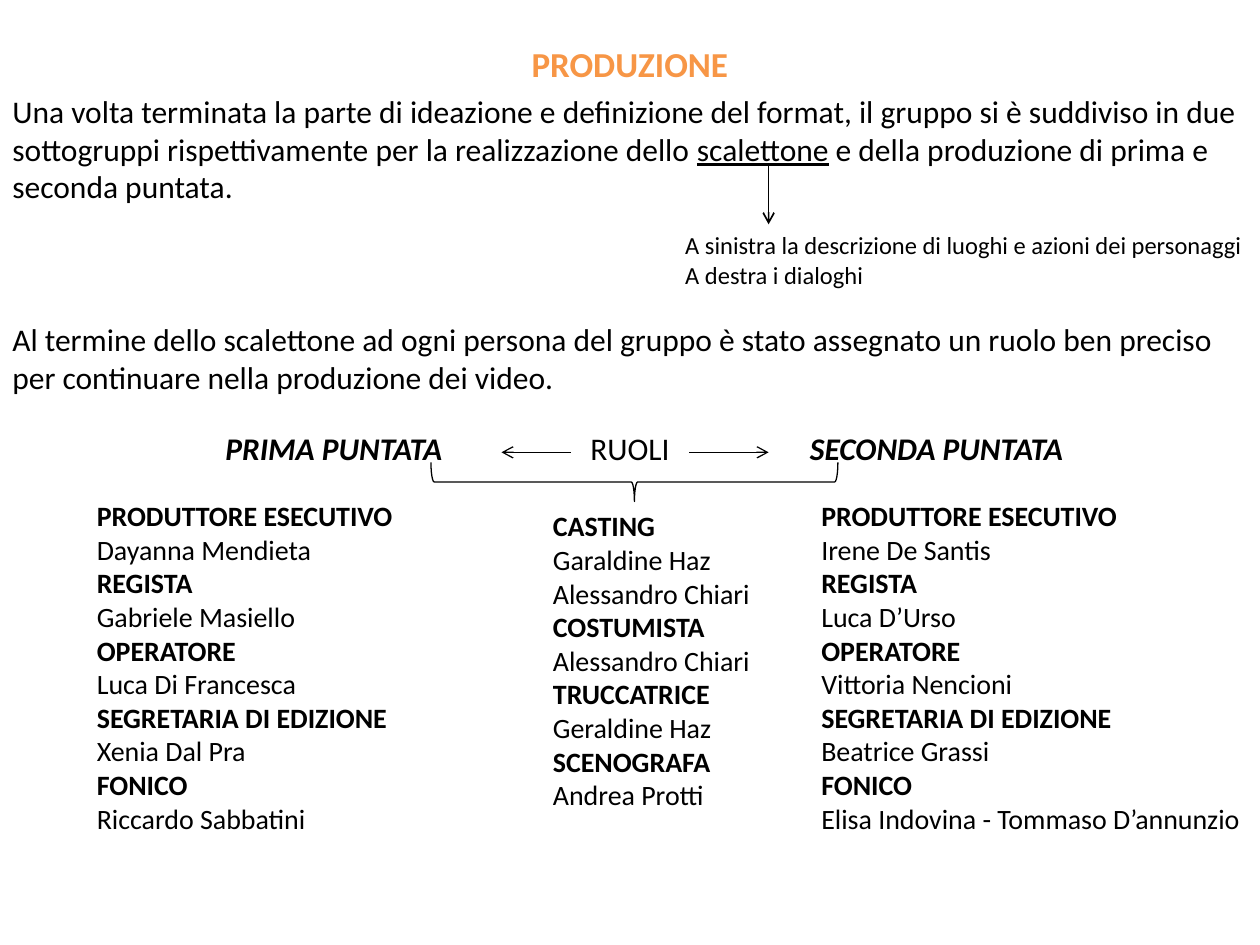
from pptx import Presentation
from pptx.dml.color import RGBColor
from pptx.enum.shapes import MSO_CONNECTOR, MSO_SHAPE
from pptx.enum.text import PP_ALIGN
from pptx.oxml.ns import qn
from pptx.util import Inches, Pt
from lxml import etree

LEFT, CENTER = PP_ALIGN.LEFT, PP_ALIGN.CENTER
STRAIGHT = MSO_CONNECTOR.STRAIGHT
RIGHT_BRACE = MSO_SHAPE.RIGHT_BRACE

THEME = {
    "font": "Calibri",
    "ink": RGBColor(0x00, 0x00, 0x00),
    "accent": RGBColor(0xF7, 0x96, 0x46),
    "title": 20, "body": 18, "names": 16, "note": 14,
}

# Content: a paragraph is a list of (text, style) runs
TITLE = "PRODUZIONE"
INTRO = [[
    ("Una volta terminata la parte di ideazione e definizione del format, "
     "il gruppo si è suddiviso in due sottogruppi rispettivamente per la "
     "realizzazione dello ", ""),
    ("scalettone", "u"),
    (" e della produzione di prima e seconda puntata.", ""),
]]
NOTE = [
    [("A sinistra la descrizione di luoghi e azioni dei personaggi", "")],
    [("A destra i dialoghi", "")],
]
ROLES_INTRO = ("Al termine dello scalettone ad ogni persona del gruppo è stato "
               "assegnato un ruolo ben preciso per continuare nella produzione "
               "dei video.")
HEADINGS = [("PRIMA PUNTATA", 1.69, 1.94), ("SECONDA PUNTATA", 6.33, 2.25)]
HUB = "RUOLI"

# Crew columns: (left, top, width, height), then (role, names)
CREWS = [
    ((0.67, 3.91, 4.09, 2.79), [
        ("PRODUTTORE ESECUTIVO", ["Dayanna Mendieta"]),
        ("REGISTA", ["Gabriele Masiello"]),
        ("OPERATORE", ["Luca Di Francesca"]),
        ("SEGRETARIA DI EDIZIONE", ["Xenia Dal Pra"]),
        ("FONICO", ["Riccardo Sabbatini"]),
    ]),
    ((4.29, 3.99, 1.78, 2.52), [
        ("CASTING", ["Garaldine Haz", "Alessandro Chiari"]),
        ("COSTUMISTA", ["Alessandro Chiari"]),
        ("TRUCCATRICE", ["Geraldine Haz"]),
        ("SCENOGRAFA", ["Andrea Protti"]),
    ]),
    ((6.42, 3.91, 3.58, 2.79), [
        ("PRODUTTORE ESECUTIVO", ["Irene De Santis"]),
        ("REGISTA", ["Luca D’Urso"]),
        ("OPERATORE", ["Vittoria Nencioni"]),
        ("SEGRETARIA DI EDIZIONE", ["Beatrice Grassi"]),
        ("FONICO", ["Elisa Indovina - Tommaso D’annunzio"]),
    ]),
]


def add_text(s, text, box, size="body", color="ink", style="", align=LEFT, wrap=True):
    """Add a text box; text is a string or a list of paragraphs of runs."""
    paragraphs = [[(text, style)]] if isinstance(text, str) else text
    sp = s.shapes.add_textbox(*map(Inches, box))
    tf = sp.text_frame
    tf.word_wrap = wrap
    for i, runs in enumerate(paragraphs):
        p = tf.add_paragraph() if i else tf.paragraphs[0]
        p.alignment = align
        for words, marks in runs:
            r = p.add_run()
            r.text = words
            r.font.name = THEME["font"]
            r.font.size = Pt(THEME[size])
            r.font.color.rgb = THEME[color]
            r.font.bold = "b" in marks
            r.font.italic = "i" in marks
            r.font.underline = "u" in marks
    return sp


def add_arrow(s, start, end, width=0.75):
    c = s.shapes.add_connector(STRAIGHT, *map(Inches, start + end))
    c.line.color.rgb = THEME["ink"]
    c.line.width = Pt(width)
    etree.SubElement(c.line._get_or_add_ln(), qn("a:tailEnd"), type="arrow")
    etree.SubElement(c._element.spPr, qn("a:effectLst"))
    return c


def crew_paragraphs(crew):
    return [[(line, "" if i else "b")]
            for role, names in crew
            for i, line in enumerate([role] + names)]


def main():
    prs = Presentation()
    prs.slide_width, prs.slide_height = Inches(10), Inches(7.5)
    s = prs.slides.add_slide(prs.slide_layouts[6])

    # Title and introduction
    add_text(s, INTRO, (0, 0.68, 10, 1.01))
    add_text(s, TITLE, (0, 0.29, 10, 0.44), size="title", color="accent",
             style="b", align=CENTER)

    # Explanation of the underlined word
    add_arrow(s, (6.1, 1.31), (6.1, 1.78), width=1)
    add_text(s, NOTE, (5.34, 1.78, 4.66, 0.57), size="note", wrap=False)
    add_text(s, ROLES_INTRO, (0, 2.49, 10, 0.71))

    # Roles hub with an arrow towards each episode
    hub = add_text(s, HUB, (4.53, 3.36, 0.94, 0.46), align=CENTER, wrap=False)
    for x_start, x_end, side in [(4.53, 3.98, 1), (5.47, 6.1, 3)]:
        arrow = add_arrow(s, (x_start, 3.59), (x_end, 3.59))
        arrow.begin_connect(hub, side)
    for heading, left, width in HEADINGS:
        add_text(s, heading, (left, 3.36, width, 0.4), style="bi", wrap=False)

    # Brace over the crew shared by both episodes
    brace = s.shapes.add_shape(RIGHT_BRACE, *map(Inches, (4.88, 2.21, 0.31, 3.23)))
    brace.rotation = 90
    brace.shadow.inherit = False
    brace.fill.background()
    brace.line.color.rgb = THEME["ink"]
    brace.line.width = Pt(0.75)

    # Crew columns
    for box, crew in CREWS:
        add_text(s, crew_paragraphs(crew), box, size="names")

    prs.save("out.pptx")


if __name__ == "__main__":
    main()
